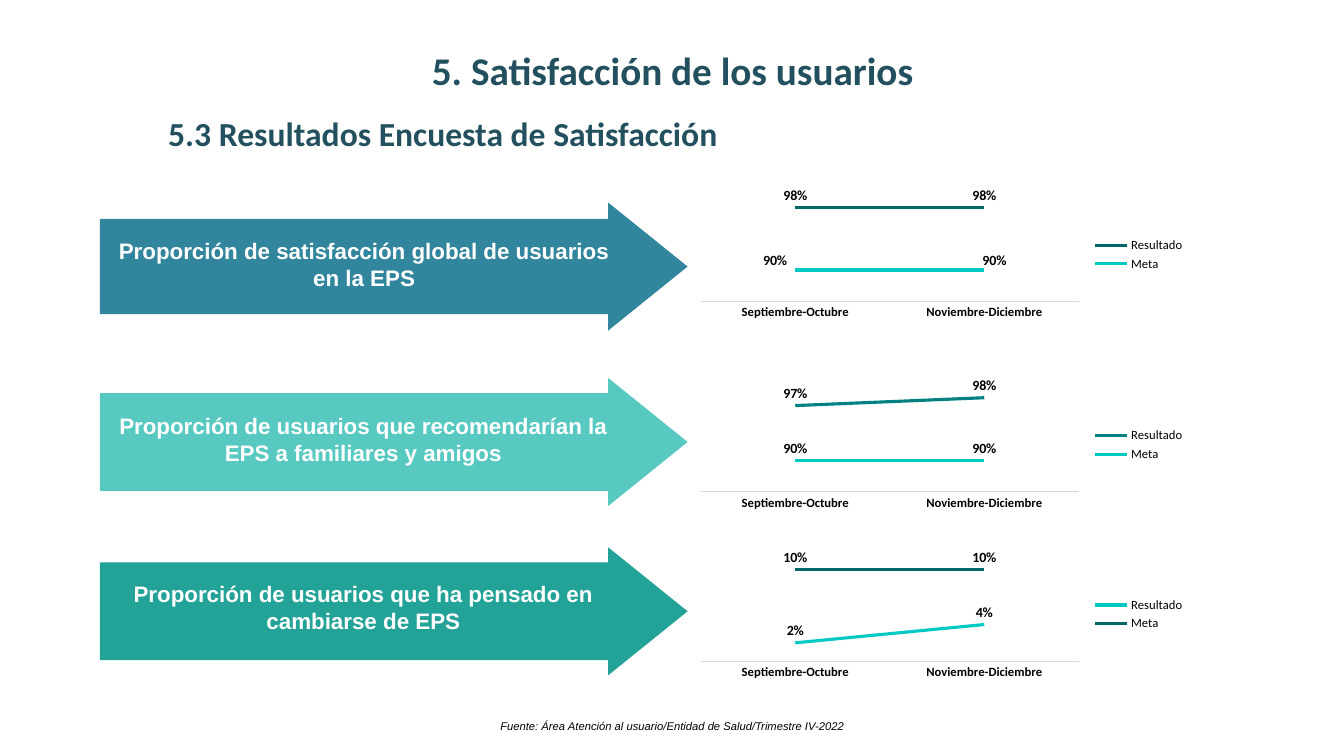
from dataclasses import dataclass

from lxml.etree import SubElement
from pptx import Presentation
from pptx.chart.chart import Chart
from pptx.chart.data import CategoryChartData
from pptx.chart.series import LineSeries
from pptx.dml.color import RGBColor
from pptx.enum.chart import XL_CHART_TYPE, XL_LABEL_POSITION, XL_LEGEND_POSITION, XL_TICK_LABEL_POSITION, XL_TICK_MARK
from pptx.enum.shapes import MSO_SHAPE
from pptx.enum.text import MSO_ANCHOR, MSO_AUTO_SIZE, PP_ALIGN
from pptx.oxml.ns import qn
from pptx.slide import Slide
from pptx.text.text import Font, TextFrame
from pptx.util import Inches, Pt


@dataclass(frozen=True)
class Theme:
    heading_font: str = "Calibri"
    body_font: str = "Arial"
    heading: str = "23505E"
    black: str = "000000"
    white: str = "FFFFFF"
    axis: str = "D9D9D9"
    dark: str = "006666"
    medium: str = "008080"
    bright: str = "00C9C4"
    blue_arrow: str = "31859C"
    light_arrow: str = "57C9C1"
    green_arrow: str = "23A297"
    title_size: int = 28
    subtitle_size: int = 24
    arrow_size: int = 16
    label_size: int = 10
    axis_size: int = 9
    source_size: int = 8


THEME = Theme()


@dataclass(frozen=True)
class TextStyle:
    size: int
    color: str
    name: str
    bold: bool = False
    italic: bool = False


@dataclass(frozen=True)
class Indicator:
    text: str
    fill: str
    arrow_top: float
    chart_top: float
    shaft: float
    bottom_inset: float
    result: tuple[float, float]
    goal: tuple[float, float]
    result_color: str
    goal_color: str
    scale: tuple[float, float]
    goal_label_offsets: tuple[tuple[float, float], ...] = ()


INDICATORS = (
    Indicator("Proporción de satisfacción global de usuarios en la EPS", THEME.blue_arrow,
              2.01, 1.86, 0.745, 0.1, (0.98, 0.98), (0.9, 0.9), THEME.dark, THEME.bright,
              (0.86, 1), ((-0.04, 0.02), (0.02, 0.02))),
    Indicator("Proporción de usuarios que recomendarían la EPS a familiares y amigos", THEME.light_arrow,
              3.75, 3.75, 0.765, 0.1, (0.97, 0.98), (0.9, 0.9), THEME.medium, THEME.bright,
              (0.86, 1)),
    Indicator("Proporción de usuarios que ha pensado en cambiarse de EPS", THEME.green_arrow,
              5.43, 5.43, 0.765, 0.13, (0.02, 0.04), (0.1, 0.1), THEME.bright, THEME.dark,
              (0, 0.12)),
)
PERIODS = ("Septiembre-Octubre", "Noviembre-Diciembre")
LABEL_STYLE = TextStyle(THEME.label_size, THEME.black, THEME.heading_font, bold=True)


def apply_style(font: Font, style: TextStyle) -> None:
    font.size = Pt(style.size)
    font.name = style.name
    font.bold = style.bold
    font.italic = style.italic
    font.color.rgb = RGBColor.from_string(style.color)


def write(frame: TextFrame, text: str, style: TextStyle, alignment: PP_ALIGN) -> None:
    frame.word_wrap = True
    paragraph = frame.paragraphs[0]
    paragraph.alignment = alignment
    run = paragraph.add_run()
    run.text = text
    apply_style(run.font, style)


def add_title(slide: Slide, text: str) -> None:
    title = slide.shapes.title
    title.left, title.top, title.width, title.height = map(Inches, (2.66, 0.41, 8.02, 0.57))
    frame = title.text_frame
    frame.vertical_anchor = MSO_ANCHOR.TOP
    frame.auto_size = MSO_AUTO_SIZE.SHAPE_TO_FIT_TEXT
    write(frame, text, TextStyle(THEME.title_size, THEME.heading, THEME.heading_font, bold=True), PP_ALIGN.CENTER)


def add_text(slide: Slide, box: tuple[float, float, float, float], text: str,
             style: TextStyle, alignment: PP_ALIGN) -> None:
    frame = slide.shapes.add_textbox(*map(Inches, box)).text_frame
    frame.auto_size = MSO_AUTO_SIZE.SHAPE_TO_FIT_TEXT
    write(frame, text, style, alignment)


def add_arrow(slide: Slide, indicator: Indicator) -> None:
    arrow = slide.shapes.add_shape(MSO_SHAPE.RIGHT_ARROW, Inches(0.99), Inches(indicator.arrow_top),
                                   Inches(5.83), Inches(1.27))
    arrow.adjustments[0] = indicator.shaft
    arrow.adjustments[1] = 0.62
    arrow.shadow.inherit = False
    arrow.fill.solid()
    arrow.fill.fore_color.rgb = RGBColor.from_string(indicator.fill)
    arrow.line.fill.background()
    frame = arrow.text_frame
    frame.vertical_anchor = MSO_ANCHOR.MIDDLE
    frame.margin_bottom = Inches(indicator.bottom_inset)
    write(frame, indicator.text, TextStyle(THEME.arrow_size, THEME.white, THEME.body_font, bold=True),
          PP_ALIGN.CENTER)


def add_layout(parent, position: int, settings: dict[str, str | float]) -> None:
    layout = parent.makeelement(qn("c:layout"))
    parent.insert(position, layout)
    manual = SubElement(layout, qn("c:manualLayout"))
    for name, value in settings.items():
        SubElement(manual, qn(f"c:{name}")).set("val", str(value))


def format_series(series: LineSeries, color: str) -> None:
    series.smooth = False
    series.format.line.width = Pt(2.25)
    series.format.line.color.rgb = RGBColor.from_string(color)
    labels = series.data_labels
    labels.show_value = True
    labels.position = XL_LABEL_POSITION.ABOVE
    labels.number_format = "0%"
    labels.number_format_is_linked = False
    apply_style(labels.font, LABEL_STYLE)
    for leader in series._element.iter(qn("c:showLeaderLines")):
        leader.set("val", "0")


def shift_labels(series: LineSeries, offsets: tuple[tuple[float, float], ...]) -> None:
    for index in range(len(offsets)):
        label = series.points[index].data_label
        label.position = XL_LABEL_POSITION.ABOVE
        apply_style(label.font, LABEL_STYLE)
    for element, (x, y) in zip(series._element.iter(qn("c:dLbl")), offsets):
        add_layout(element, 1, {"x": x, "y": y})


def format_axes(chart: Chart, scale: tuple[float, float]) -> None:
    category_axis = chart.category_axis
    category_axis.major_tick_mark = XL_TICK_MARK.NONE
    category_axis.tick_label_position = XL_TICK_LABEL_POSITION.NEXT_TO_AXIS
    category_axis.format.line.width = Pt(0.75)
    category_axis.format.line.color.rgb = RGBColor.from_string(THEME.axis)
    apply_style(category_axis.tick_labels.font,
                TextStyle(THEME.axis_size, THEME.black, THEME.heading_font, bold=True))
    value_axis = chart.value_axis
    value_axis.minimum_scale, value_axis.maximum_scale = scale
    value_axis.has_major_gridlines = False
    value_axis.visible = False


def add_line_chart(slide: Slide, indicator: Indicator) -> None:
    data = CategoryChartData(number_format="0%")
    data.categories = PERIODS
    data.add_series("Resultado", indicator.result)
    data.add_series("Meta", indicator.goal)
    chart = slide.shapes.add_chart(XL_CHART_TYPE.LINE, Inches(6.85), Inches(indicator.chart_top),
                                   Inches(5), Inches(1.33), data).chart
    chart.has_title = False
    apply_style(chart.font, TextStyle(THEME.label_size, THEME.black, THEME.heading_font))
    chart.has_legend = True
    chart.legend.position = XL_LEGEND_POSITION.RIGHT
    chart.legend.include_in_layout = False
    apply_style(chart.legend.font, TextStyle(THEME.axis_size, THEME.black, THEME.heading_font))
    format_axes(chart, indicator.scale)
    plot = chart.plots[0]
    plot.vary_by_categories = False
    for series, color in zip(plot.series, (indicator.result_color, indicator.goal_color)):
        format_series(series, color)
    shift_labels(plot.series[1], indicator.goal_label_offsets)
    plot_area = chart.category_axis._element.getparent()
    for layout in plot_area.findall(qn("c:layout")):
        plot_area.remove(layout)
    add_layout(plot_area, 0, {"layoutTarget": "inner", "xMode": "edge", "yMode": "edge",
                              "x": 0.02, "y": 0.03, "w": 0.75, "h": 0.82})


def main() -> None:
    presentation = Presentation()
    presentation.slide_width, presentation.slide_height = Inches(13.33), Inches(7.5)
    slide = presentation.slides.add_slide(presentation.slide_layouts[5])
    add_title(slide, "5. Satisfacción de los usuarios")
    add_text(slide, (1.57, 1.07, 7.02, 0.5), "5.3 Resultados Encuesta de Satisfacción",
             TextStyle(THEME.subtitle_size, THEME.heading, THEME.heading_font, bold=True), PP_ALIGN.LEFT)
    for indicator in INDICATORS:
        add_arrow(slide, indicator)
        add_line_chart(slide, indicator)
    add_text(slide, (3.42, 7.09, 6.5, 0.24), "Fuente: Área Atención al usuario/Entidad de Salud/Trimestre IV-2022",
             TextStyle(THEME.source_size, THEME.black, THEME.body_font, italic=True), PP_ALIGN.CENTER)
    presentation.save("out.pptx")


if __name__ == "__main__":
    main()
